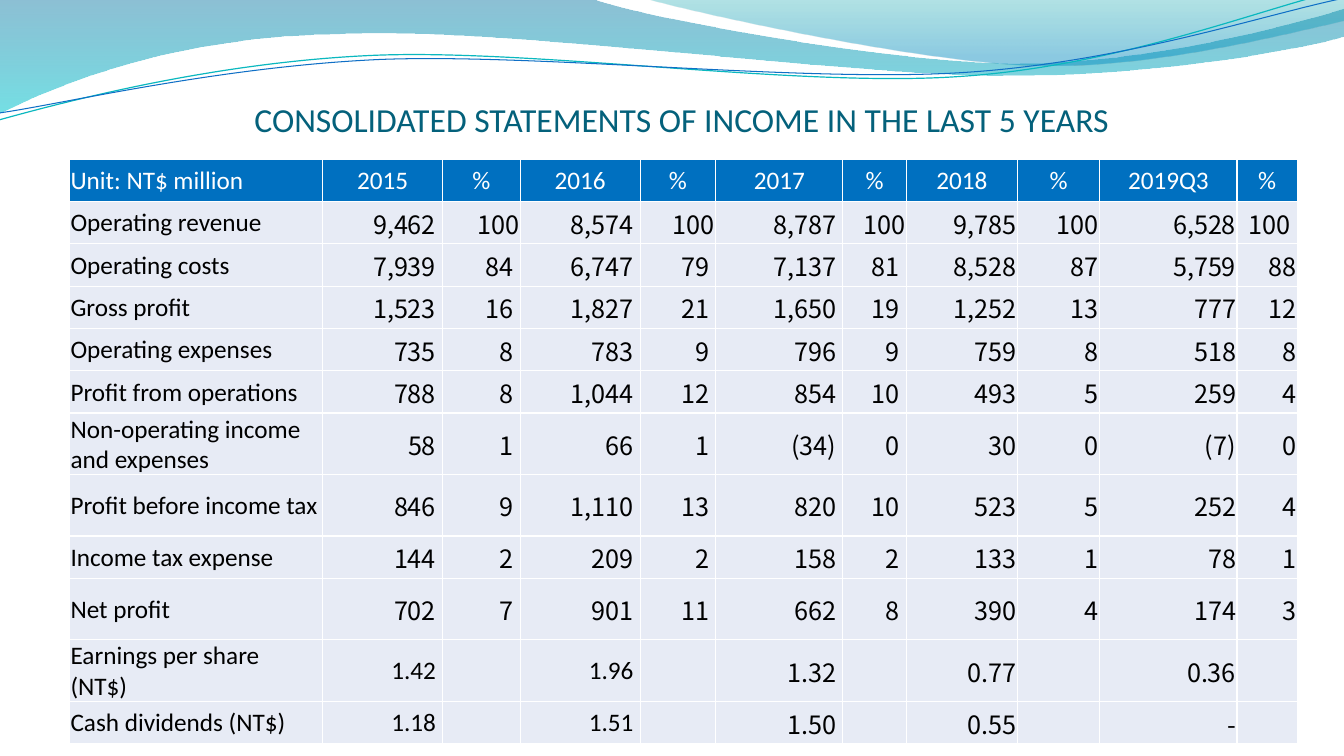
from math import cos, radians, sin

from lxml.etree import SubElement
from pptx import Presentation
from pptx.dml.color import RGBColor
from pptx.enum.text import MSO_ANCHOR, PP_ALIGN
from pptx.oxml.ns import qn
from pptx.util import Inches, Pt

LABEL_FONT = "Calibri"
FIGURE_FONT = "Noto Sans CJK SC"

# Waves: a start point, then lines (2 numbers) and curves (6 numbers), in inches
LEFT_WAVE = [
    (0, 0), (5.87, -0.01),
    (6.34, 0.17, 8.85, 0.63, 10.11, 0.63), (11.38, 0.63, 12.78, 0.26, 13.33, 0.09),
    (13.35, 0.36),
    (13.11, 0.44, 11.6, 0.76, 9.94, 0.75), (8.29, 0.75, 5.09, 0.28, 3.43, 0.34),
    (1.72, 0.36, 0.61, 0.83, -0.01, 1.13),
]
RIGHT_WAVE = [
    (6.39, -0.01),
    (6.79, 0.11, 9.09, 0.62, 10.25, 0.65), (11.41, 0.69, 12.82, 0.32, 13.33, 0.21),
    (13.33, 0),
]
TEAL_LINE = [
    (-0.01, 1.19),
    (0.64, 1.01, 2.11, 0.62, 3.69, 0.55), (5.27, 0.48, 7.9, 0.87, 9.5, 0.76),
    (11.1, 0.66, 12.52, 0.08, 13.31, -0.1),
]
BLUE_LINE = [
    (0, 1.12),
    (0.63, 1.03, 2.18, 0.66, 3.78, 0.59), (5.37, 0.53, 7.96, 0.82, 9.55, 0.72),
    (11.15, 0.62, 12.55, 0.14, 13.34, -0.02),
]
LINE_TILT = -2.7

COLUMN_WIDTHS = [2.51, 1.19, 0.77, 1.19, 0.75, 1.26, 0.63, 1.1, 0.82, 1.36, 0.6]
ROW_HEIGHT, TALL_ROW_HEIGHT = 0.42, 0.61
TALL_ROWS = {6, 7, 9, 10}
PER_SHARE_ROWS = {10, 11}
INCOME_ROWS = [
    "Unit: NT$ million|2015|%|2016|%|2017|%|2018|%|2019Q3|%",
    "Operating revenue|9,462|100|8,574|100|8,787|100|9,785|100|6,528|100 ",
    "Operating costs|7,939|84|6,747|79|7,137|81|8,528|87|5,759|88",
    "Gross profit|1,523|16|1,827|21|1,650|19|1,252|13|777|12",
    "Operating expenses|735|8|783|9|796|9|759|8|518|8",
    "Profit from operations|788|8|1,044|12|854|10|493|5|259|4",
    "Non-operating income and expenses|58|1|66|1|(34)|0|30|0|(7)|0",
    "Profit before income tax|846|9|1,110|13|820|10|523|5|252|4",
    "Income tax expense|144|2|209|2|158|2|133|1|78|1",
    "Net profit|702|7|901|11|662|8|390|4|174|3",
    "Earnings per share (NT$)|1.42||1.96||1.32||0.77||0.36|",
    "Cash dividends (NT$)|1.18||1.51||1.50||0.55||-|",
]


def color(hex_value):
    return RGBColor.from_string(hex_value)


def format_text(paragraph, size, font, hex_value, alignment):
    paragraph.alignment = alignment
    for span in paragraph.runs:
        span.font.size = Pt(size)
        span.font.name = font
        span.font.color.rgb = color(hex_value)


def turn(segment, center, degrees):
    """Turn every point of a segment around the center."""
    angle = radians(degrees)
    turned = []
    for x, y in zip(segment[::2], segment[1::2]):
        dx, dy = x - center[0], y - center[1]
        turned += [center[0] + dx * cos(angle) - dy * sin(angle),
                   center[1] + dx * sin(angle) + dy * cos(angle)]
    return turned


def add_curve(page, segments, close):
    """Build the outline from its points, then bend each group of three into a curve."""
    start, *rest = [[Inches(number) for number in segment] for segment in segments]
    points = [point for segment in rest for point in zip(segment[::2], segment[1::2])]
    builder = page.shapes.build_freeform(*start, scale=1.0)
    builder.add_line_segments(points, close=close)
    shape = builder.convert_to_shape()
    shape.shadow.inherit = False
    steps = iter(list(shape.element.iter(qn("a:lnTo"))))
    for segment in rest:
        step = next(steps)
        if len(segment) == 6:
            curve = step.makeelement(qn("a:cubicBezTo"))
            step.addprevious(curve)
            for part in (step, next(steps), next(steps)):
                curve.append(part[0])
                part.getparent().remove(part)
    return shape


def add_wave(page, segments, stops):
    wave = add_curve(page, segments, close=True)
    wave.line.fill.background()
    wave.fill.gradient()
    wave.fill.gradient_angle = 270
    for stop, (position, hex_value, opacity) in zip(wave.fill.gradient_stops, stops):
        stop.position = position
        stop.color.rgb = color(hex_value)
    colors = wave.element.spPr.iter(qn("a:srgbClr"))
    for element, (position, hex_value, opacity) in zip(colors, stops):
        SubElement(element, qn("a:alpha"), val=str(opacity * 1000))


def add_wave_line(page, segments, center, hex_value, width):
    level = [turn(segment, center, -LINE_TILT) for segment in segments]
    line = add_curve(page, level, close=False)
    line.rotation = LINE_TILT
    line.fill.background()
    line.line.color.rgb = color(hex_value)
    line.line.width = Pt(width)


def add_title(page, text):
    box = page.shapes.add_textbox(Inches(1.24), Inches(0.68), Inches(11.04), Inches(0.7))
    frame = box.text_frame
    frame.word_wrap = True
    frame.vertical_anchor = MSO_ANCHOR.BOTTOM
    frame.margin_left = frame.margin_right = frame.margin_bottom = 0
    frame.text = text
    format_text(frame.paragraphs[0], 24, LABEL_FONT, "04617B", PP_ALIGN.CENTER)


def style_cell(cell, fill):
    cell.vertical_anchor = MSO_ANCHOR.MIDDLE
    cell.margin_left = cell.margin_right = cell.margin_top = Inches(0.01)
    cell.margin_bottom = 0
    properties = cell._tc.get_or_add_tcPr()
    for side in ("a:lnL", "a:lnR", "a:lnT", "a:lnB"):
        border = SubElement(properties, qn(side), w=str(Pt(1)))
        SubElement(SubElement(border, qn("a:solidFill")), qn("a:srgbClr"), val="FFFFFF")
    cell.fill.solid()
    cell.fill.fore_color.rgb = color(fill)


def fill_cell(cell, row, column, value):
    header = row == 0
    style_cell(cell, "0070C0" if header else "E7EBF5")
    font, alignment = LABEL_FONT, PP_ALIGN.LEFT
    if column:
        alignment = PP_ALIGN.CENTER if header else PP_ALIGN.RIGHT
        if not header and not (row in PER_SHARE_ROWS and column < 5):
            font = FIGURE_FONT
        # Figures up to 2017 stand one space off the right edge
        if value and not header and column <= 6 and value != "100":
            value += " "
    cell.text_frame.text = value
    format_text(cell.text_frame.paragraphs[0], 18, font,
                "FFFFFF" if header else "000000", alignment)


def add_income_table(page):
    heights = [TALL_ROW_HEIGHT if row in TALL_ROWS else ROW_HEIGHT
               for row in range(len(INCOME_ROWS))]
    table = page.shapes.add_table(
        len(heights), len(COLUMN_WIDTHS), Inches(0.69), Inches(1.58),
        Inches(sum(COLUMN_WIDTHS)), Inches(sum(heights))).table
    table.first_row = table.horz_banding = False
    for column, width in zip(table.columns, COLUMN_WIDTHS):
        column.width = Inches(width)
    for row, (height, line) in enumerate(zip(heights, INCOME_ROWS)):
        table.rows[row].height = Inches(height)
        for column, value in enumerate(line.split("|")):
            fill_cell(table.cell(row, column), row, column, value)


def main():
    deck = Presentation()
    deck.slide_width, deck.slide_height = Inches(13.33), Inches(7.5)
    page = deck.slides.add_slide(deck.slide_layouts[6])

    # Waves along the top
    add_wave(page, LEFT_WAVE, [(0, "0074A1", 45), (1, "00C6CF", 55)])
    add_wave(page, RIGHT_WAVE, [(0, "00A1A9", 30), (0.8, "008BBF", 45)])
    add_wave_line(page, TEAL_LINE, (6.65, 0.58), "0AB8BF", 0.85)
    add_wave_line(page, BLUE_LINE, (6.67, 0.59), "0F6FC6", 0.75)

    # Title and figures
    add_title(page, "CONSOLIDATED STATEMENTS OF INCOME IN THE LAST 5 YEARS")
    add_income_table(page)
    deck.save("out.pptx")


if __name__ == "__main__":
    main()
